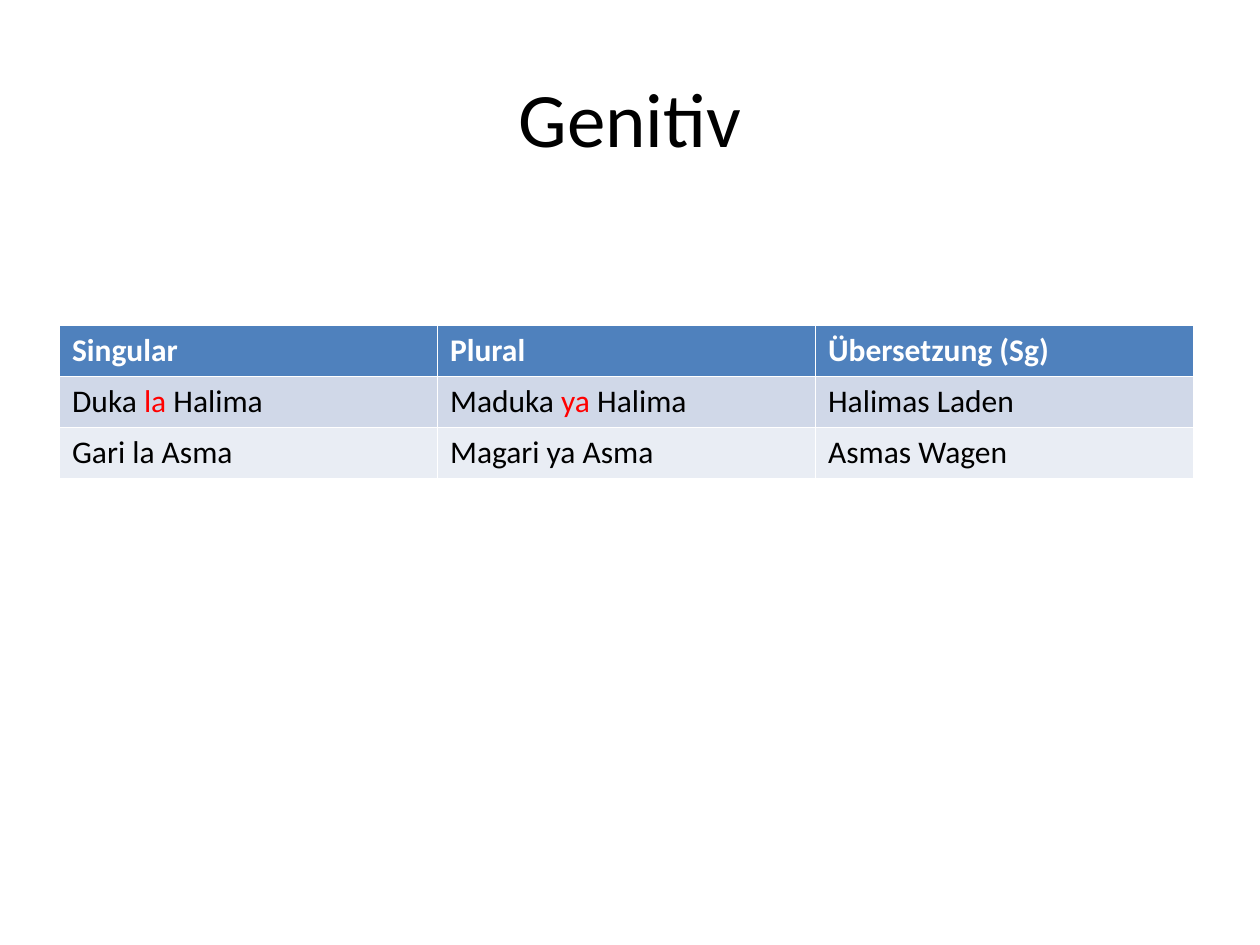
from pptx import Presentation
from pptx import util as u
from pptx.dml.color import RGBColor
from pptx.enum import text

BLACK = RGBColor(0x00, 0x00, 0x00)
WHITE = RGBColor(0xFF, 0xFF, 0xFF)
RED = RGBColor(0xFF, 0x00, 0x00)
FILLS = [RGBColor(0x4F, 0x81, 0xBD), RGBColor(0xD0, 0xD8, 0xE8), RGBColor(0xE9, 0xED, 0xF4)]

# Bars enclose the words set in red
ROWS = [
    ["Singular", "Plural", "Übersetzung (Sg)"],
    ["Duka |la| Halima", "Maduka |ya| Halima", "Halimas Laden"],
    ["Gari la Asma", "Magari ya Asma", "Asmas Wagen"],
]


def style(run, size, color, bold=False):
    font = run.font
    font.name = "Calibri"
    font.size = u.Pt(size)
    font.bold = bold
    font.color.rgb = color


deck = Presentation()
deck.slide_width, deck.slide_height = u.Cm(25.4), u.Cm(19.05)
slide = deck.slides.add_slide(deck.slide_layouts[5])

# Title
title = slide.shapes.title
title.left, title.top = u.Cm(1.27), u.Cm(0.76)
title.width, title.height = u.Cm(22.86), u.Cm(3.18)
frame = title.text_frame
frame.text = "Genitiv"
frame.vertical_anchor = text.MSO_ANCHOR.MIDDLE
line = frame.paragraphs[0]
line.alignment = text.PP_ALIGN.CENTER
style(line.runs[0], 44, BLACK)

# Genitive table; the default table style draws the white borders
grid = slide.shapes.add_table(
    len(ROWS), len(ROWS[0]), u.Cm(1.2), u.Cm(6.56), u.Cm(22.86), u.Cm(3.09)
).table
for r, row in enumerate(ROWS):
    head = r == 0
    for c, words in enumerate(row):
        cell = grid.cell(r, c)
        cell.fill.solid()
        cell.fill.fore_color.rgb = FILLS[r]
        line = cell.text_frame.paragraphs[0]
        for i, part in enumerate(words.split("|")):
            run = line.add_run()
            run.text = part
            color = RED if i % 2 else WHITE if head else BLACK
            style(run, 18, color, head)

deck.save("out.pptx")
